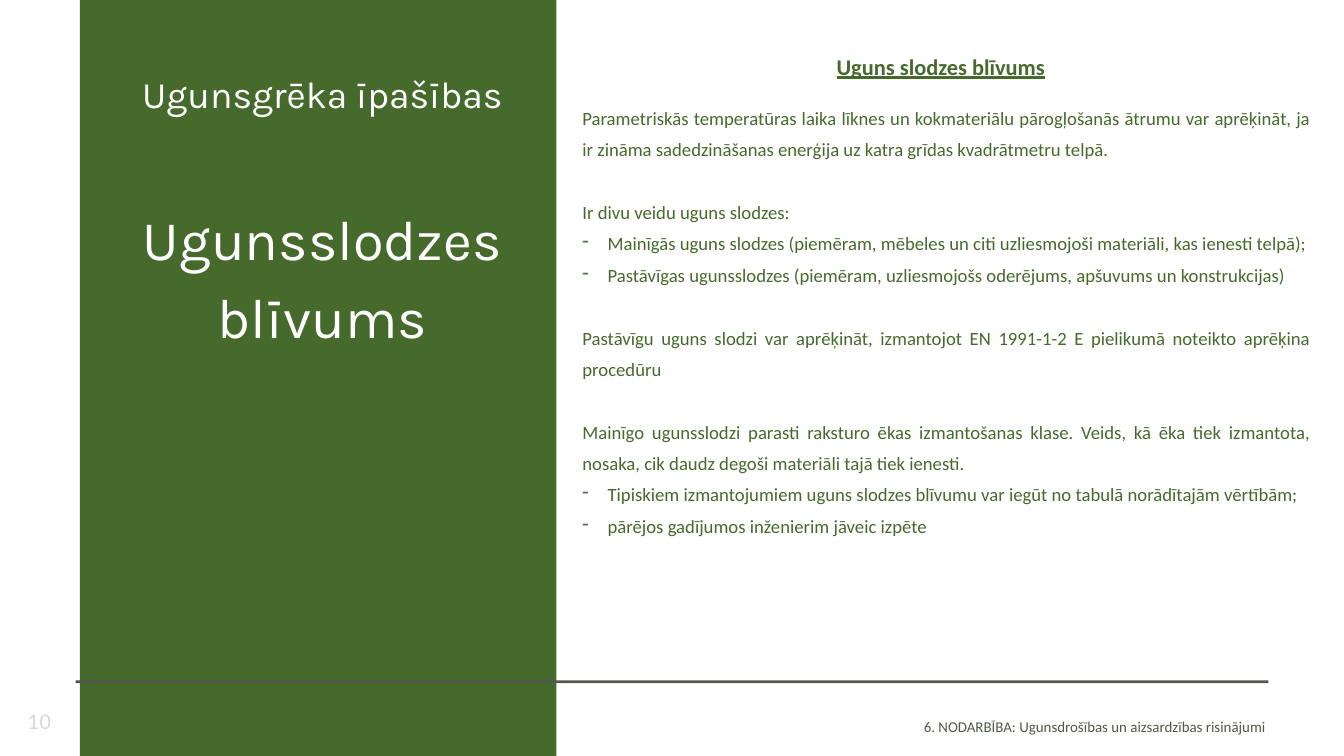
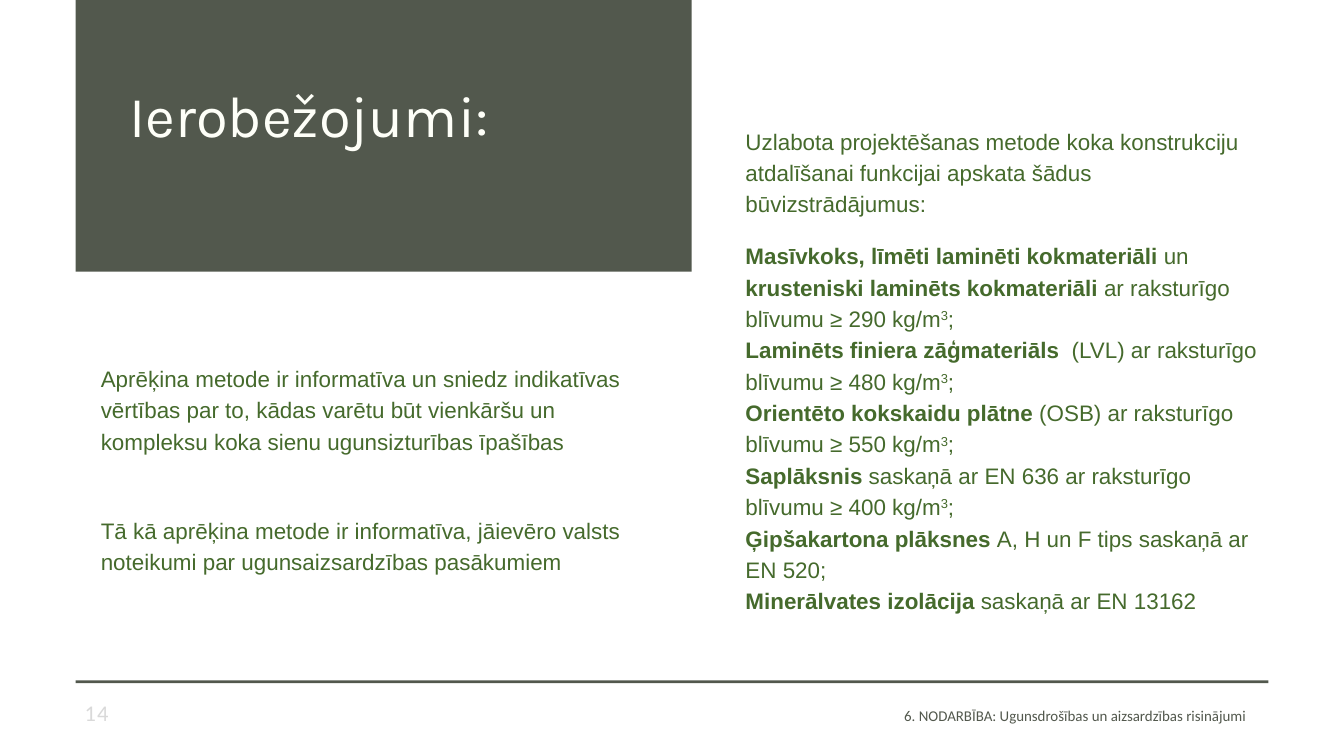
from dataclasses import dataclass, field
from typing import NamedTuple

from lxml.etree import SubElement
from pptx import Presentation
from pptx.dml.color import RGBColor
from pptx.enum.shapes import MSO_SHAPE
from pptx.enum.text import MSO_ANCHOR, MSO_AUTO_SIZE, PP_ALIGN
from pptx.oxml.ns import qn
from pptx.util import Pt

EMU_PER_PX = 9525
WIDTH, HEIGHT = 1920, 1080


@dataclass(frozen=True)
class Theme:
    green: str = "456A2C"
    grey: str = "52584D"
    pale: str = "D9D9D9"
    white: str = "FFFFFF"
    ivory: str = "FEFFF8"
    title_font: str = "Karla"
    body_font: str = "Calibri"
    list_font: str = "Arial"
    kicker: float = 40
    title: float = 60
    big_title: float = 62
    heading: float = 24
    body: float = 20
    footer: float = 16
    body_leading: float = 33.6
    title_leading: float = 83.7
    footer_leading: float = 22.4


T = Theme()


class Box(NamedTuple):
    x: int
    y: int
    w: int
    h: int


class Run(NamedTuple):
    text: str
    format: dict = {}
    raised: bool = False


@dataclass(frozen=True)
class Style:
    font: str
    size: float
    color: str
    leading: float | None = None
    align: PP_ALIGN = PP_ALIGN.LEFT
    format: dict = field(default_factory=dict)
    tracking: int = 0


@dataclass(frozen=True)
class Para:
    runs: list[Run]
    style: Style
    gap: float = 0
    dash: bool = False


# Text styles
HEADING = Style(T.body_font, T.heading, T.green, T.body_leading, PP_ALIGN.CENTER,
                {"bold": True, "underline": True})
BODY = Style(T.body_font, T.body, T.green, T.body_leading, PP_ALIGN.JUSTIFY)
LIST = Style(T.list_font, T.heading, T.green, T.body_leading)
KICKER = Style(T.title_font, T.kicker, T.white, align=PP_ALIGN.CENTER)
TITLE = Style(T.title_font, T.title, T.white, T.title_leading, PP_ALIGN.CENTER)
BIG_TITLE = Style(T.title_font, T.big_title, T.ivory, T.title_leading)
NUMBER = Style(T.body_font, T.heading, T.pale, tracking=120)
FOOTER = Style(T.body_font, T.footer, T.grey, T.footer_leading, PP_ALIGN.RIGHT)

FOOTER_TEXT = "6. NODARBĪBA: Ugunsdrošības un aizsardzības risinājumi "
DASH_INDENT = 36
RULE = Box(108, 972, 1704, 4)


def px(box: Box) -> list[int]:
    return [v * EMU_PER_PX for v in box]


def para(text: str, style: Style, gap: float = 0, dash: bool = False) -> Para:
    return Para([Run(text)], style, gap, dash)


def add_band(s, box: Box, color: str) -> None:
    sp = s.shapes.add_shape(MSO_SHAPE.RECTANGLE, *px(box))
    sp.shadow.inherit = False
    sp.fill.solid()
    sp.fill.fore_color.rgb = RGBColor.from_string(color)
    sp.line.fill.background()


def add_run(p, run: Run, style: Style) -> None:
    r = p.add_run()
    r.text = run.text
    formats = {"name": style.font, "size": Pt(style.size), **style.format, **run.format}
    for name, value in formats.items():
        setattr(r.font, name, value)
    r.font.color.rgb = RGBColor.from_string(style.color)
    rPr = r._r.get_or_add_rPr()
    if run.raised:
        rPr.set("baseline", "30000")
    if style.tracking:
        rPr.set("spc", str(style.tracking))


def add_dash(p) -> None:
    pPr = p._p.get_or_add_pPr()
    indent = DASH_INDENT * EMU_PER_PX
    pPr.set("marL", str(indent))
    pPr.set("indent", str(-indent))
    SubElement(pPr, qn("a:buChar")).set("char", "-")


def add_text(s, box: Box, paras: list[Para]):
    tf = s.shapes.add_textbox(*px(box)).text_frame
    formats = {"word_wrap": True, "auto_size": MSO_AUTO_SIZE.SHAPE_TO_FIT_TEXT,
               "margin_left": 0, "margin_top": 0, "margin_right": 0, "margin_bottom": 0}
    for name, value in formats.items():
        setattr(tf, name, value)
    for i, item in enumerate(paras):
        p = tf.add_paragraph() if i else tf.paragraphs[0]
        p.alignment = item.style.align
        if item.style.leading:
            p.line_spacing = Pt(item.style.leading)
        if item.gap:
            p.space_before = Pt(item.gap)
        if item.dash:
            add_dash(p)
        for run in item.runs:
            add_run(p, run, item.style)
    return tf


def add_footer(s, number: str, number_at: tuple[int, int], footer_at: tuple[int, int]) -> None:
    add_band(s, RULE, T.grey)
    x, y = number_at
    tf = add_text(s, Box(x + 10, y, 204, 38), [para(number, NUMBER)])
    tf.auto_size = MSO_AUTO_SIZE.NONE
    tf.vertical_anchor = MSO_ANCHOR.MIDDLE
    add_text(s, Box(*footer_at, 799, 28), [para(FOOTER_TEXT, FOOTER)])


def bold(text: str) -> Run:
    return Run(text, {"bold": True})


def density(value: int, lead: str = "") -> list[Run]:
    return [Run(f"{lead} ar raksturīgo blīvumu ≥ {value} kg/m"), Run("3", raised=True), Run(";")]


def build_fire_load(prs) -> None:
    s = prs.slides.add_slide(prs.slide_layouts[6])
    # Title panel
    add_band(s, Box(114, 0, 681, HEIGHT), T.green)
    add_text(s, Box(185, 101, 551, 395), [
        para("Ugunsgrēka īpašības", KICKER),
        para("Ugunsslodzes blīvums", TITLE, gap=T.title_leading),
    ])
    # Explanation
    add_text(s, Box(928, 69, 832, 42), [para("Uguns slodzes blīvums", HEADING)])
    gap = T.body_leading
    add_text(s, Box(832, 140, 1040, 728), [
        para("Parametriskās temperatūras laika līknes un kokmateriālu pārogļošanās ātrumu var "
             "aprēķināt, ja ir zināma sadedzināšanas enerģija uz katra grīdas kvadrātmetru telpā.",
             BODY),
        para("Ir divu veidu uguns slodzes:", BODY, gap),
        para("Mainīgās uguns slodzes (piemēram, mēbeles un citi uzliesmojoši materiāli, "
             "kas ienesti telpā);", BODY, dash=True),
        para("Pastāvīgas ugunsslodzes (piemēram, uzliesmojošs oderējums, apšuvums "
             "un konstrukcijas)", BODY, dash=True),
        para("Pastāvīgu uguns slodzi var aprēķināt, izmantojot EN 1991-1-2 E pielikumā "
             "noteikto aprēķina procedūru", BODY, gap),
        para("Mainīgo ugunsslodzi parasti raksturo ēkas izmantošanas klase. Veids, kā ēka tiek "
             "izmantota, nosaka, cik daudz degoši materiāli tajā tiek ienesti.", BODY, gap),
        para("Tipiskiem izmantojumiem uguns slodzes blīvumu var iegūt no tabulā norādītajām "
             "vērtībām;", BODY, dash=True),
        para("pārējos gadījumos inženierim jāveic izpēte", BODY, dash=True),
    ])
    add_footer(s, "10", (29, 1010), (1014, 1021))


def build_limits(prs) -> None:
    s = prs.slides.add_slide(prs.slide_layouts[6])
    # Title panel
    add_band(s, Box(108, 0, 880, 388), T.grey)
    add_text(s, Box(185, 101, 726, 104), [para("Ierobežojumi:", BIG_TITLE)])
    # Notes on the method
    add_text(s, Box(144, 515, 747, 133), [para(
        "Aprēķina metode ir informatīva un sniedz indikatīvas vērtības par to, kādas varētu būt "
        "vienkāršu un kompleksu koka sienu ugunsizturības īpašības", LIST)])
    add_text(s, Box(144, 732, 747, 87), [para(
        "Tā kā aprēķina metode ir informatīva, jāievēro valsts noteikumi par "
        "ugunsaizsardzības pasākumiem", LIST)])
    # Products covered
    add_text(s, Box(1065, 176, 747, 134), [para(
        "Uzlabota projektēšanas metode koka konstrukciju atdalīšanai funkcijai apskata "
        "šādus būvizstrādājumus:", LIST)])
    products = [
        [bold("Masīvkoks, līmēti laminēti kokmateriāli"), Run(" un "),
         bold("krusteniski laminēts kokmateriāli"), *density(290)],
        [bold("Laminēts finiera zāģmateriāls "), *density(480, " (LVL)")],
        [bold("Orientēto kokskaidu plātne"), *density(550, " (OSB)")],
        [bold("Saplāksnis"), *density(400, " saskaņā ar EN 636")],
        [bold("Ģipšakartona plāksnes "), Run("A, H un F tips saskaņā ar EN 520;")],
        [bold("Minerālvates izolācija"), Run(" saskaņā ar EN 13162")],
    ]
    add_text(s, Box(1065, 340, 747, 545), [Para(runs, LIST) for runs in products])
    add_footer(s, "14", (111, 999), (986, 1005))


def main() -> None:
    prs = Presentation()
    prs.slide_width, prs.slide_height = WIDTH * EMU_PER_PX, HEIGHT * EMU_PER_PX
    build_fire_load(prs)
    build_limits(prs)
    prs.save("out.pptx")


if __name__ == "__main__":
    main()
